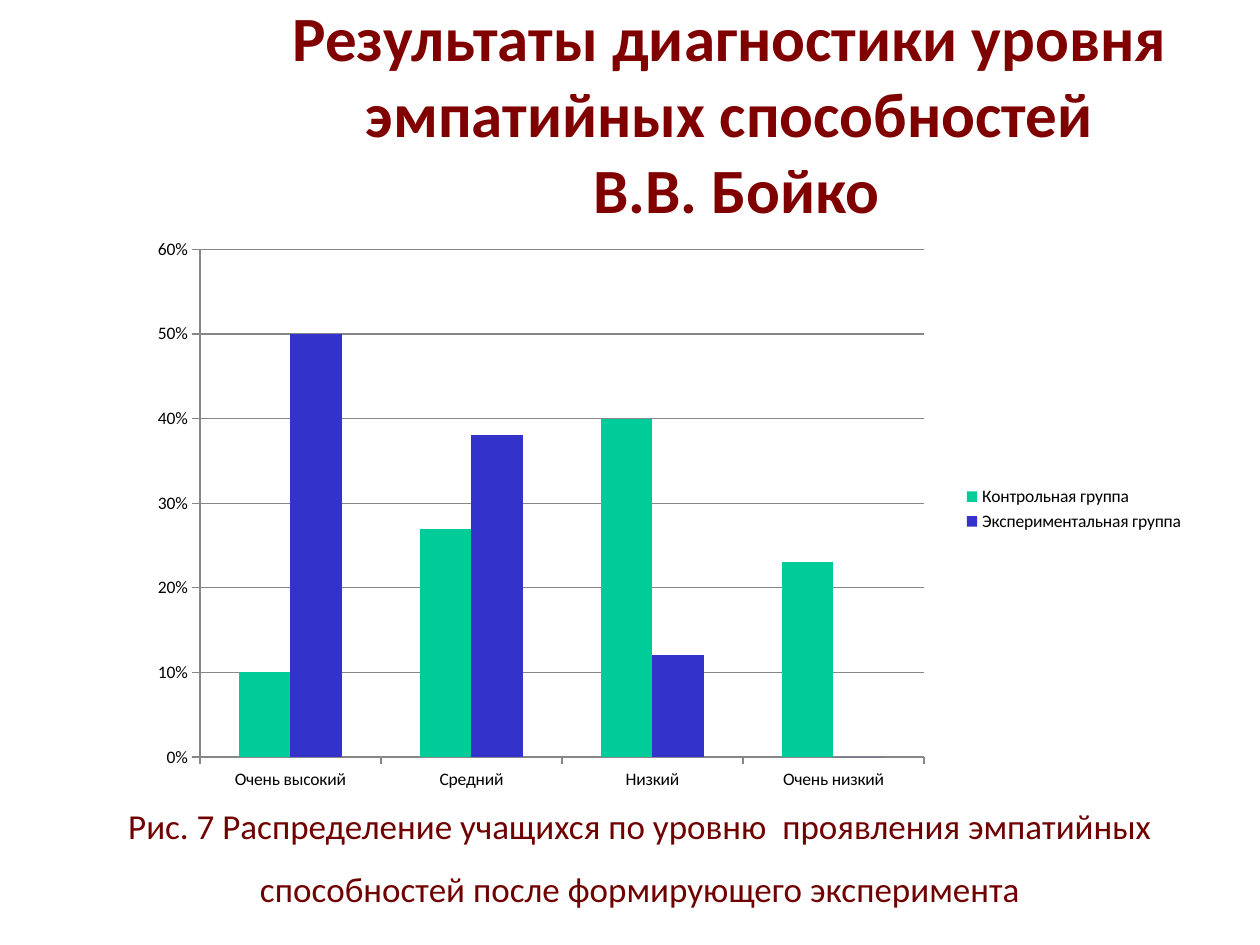
from lxml import etree
from pptx import Presentation
from pptx.chart.data import CategoryChartData
from pptx.dml.color import RGBColor
from pptx.enum.chart import XL_CHART_TYPE as ChartType
from pptx.enum.chart import XL_LEGEND_POSITION as LegendPosition
from pptx.enum.chart import XL_TICK_MARK as TickMark
from pptx.enum.text import MSO_ANCHOR as Anchor
from pptx.enum.text import PP_ALIGN as Align
from pptx.oxml.ns import qn
from pptx.util import Inches, Pt


def color(hex_string):
    return RGBColor.from_string(hex_string)


class SlideBuilder:
    font_name = "Calibri"
    axis_color = "878787"

    def __init__(self, slide):
        self.slide = slide

    def style_font(self, font, size, hex_string, bold=False):
        font.name = self.font_name
        font.size = Pt(size)
        font.bold = bold
        font.color.rgb = color(hex_string)

    def add_text(self, box, text, size, hex_string, bold=False,
                 anchor=Anchor.TOP, line_spacing=1.0, space_after=0):
        shape = self.slide.shapes.add_textbox(*map(Inches, box))
        text_frame = shape.text_frame
        text_frame.word_wrap = True
        text_frame.vertical_anchor = anchor
        text_frame.text = text
        paragraph = text_frame.paragraphs[0]
        paragraph.alignment = Align.CENTER
        paragraph.line_spacing = line_spacing
        paragraph.space_after = Pt(space_after)
        for run in paragraph.runs:
            self.style_font(run.font, size, hex_string, bold)

    def style_line(self, line):
        line.color.rgb = color(self.axis_color)
        line.width = Pt(0.75)

    def add_column_chart(self, box, categories, series, plot_area):
        chart_data = CategoryChartData(number_format="0%")
        chart_data.categories = categories
        for name, values, _ in series:
            chart_data.add_series(name, values)
        chart = self.slide.shapes.add_chart(
            ChartType.COLUMN_CLUSTERED, *map(Inches, box), chart_data).chart
        chart.has_title = False
        self.style_font(chart.font, 10, "000000")

        # Columns
        plot = chart.plots[0]
        plot.gap_width = 150
        plot.overlap = 0
        plot.vary_by_categories = False
        for column, (_, _, fill_color) in zip(plot.series, series):
            column.format.fill.solid()
            column.format.fill.fore_color.rgb = color(fill_color)

        # Axes and gridlines
        for axis in (chart.category_axis, chart.value_axis):
            axis.major_tick_mark = TickMark.OUTSIDE
            axis.minor_tick_mark = TickMark.NONE
            self.style_line(axis.format.line)
        value_axis = chart.value_axis
        value_axis.minimum_scale, value_axis.maximum_scale = 0, 0.6
        value_axis.major_unit = 0.1
        value_axis.tick_labels.number_format = "0%"
        value_axis.tick_labels.number_format_is_linked = False
        value_axis.has_major_gridlines = True
        self.style_line(value_axis.major_gridlines.format.line)

        # Legend
        chart.has_legend = True
        chart.legend.position = LegendPosition.RIGHT
        chart.legend.include_in_layout = False
        self.place_plot(chart, plot_area)

    def place_plot(self, chart, plot_area):
        area = chart._chartSpace.find(".//" + qn("c:plotArea"))
        layout = area.find(qn("c:layout"))
        if layout is None:
            layout = etree.Element(qn("c:layout"))
            area.insert(0, layout)
        manual = etree.SubElement(layout, qn("c:manualLayout"))
        settings = [("layoutTarget", "inner"), ("xMode", "edge"),
                    ("yMode", "edge"), *zip("xywh", plot_area)]
        for tag, value in settings:
            etree.SubElement(manual, qn("c:" + tag)).set("val", str(value))


def main():
    presentation = Presentation()
    presentation.slide_width = Inches(10)
    presentation.slide_height = Inches(7.5)
    slide = presentation.slides.add_slide(presentation.slide_layouts[6])
    builder = SlideBuilder(slide)

    # Title
    builder.add_text(
        (1.58, 0.17, 8.42, 1.67),
        "Результаты диагностики уровня эмпатийных способностей\v В.В. Бойко",
        36, "800000", bold=True, anchor=Anchor.BOTTOM)

    # Figure caption
    builder.add_text(
        (0.58, 6.17, 9, 1.33),
        "Рис. 7 Распределение учащихся по уровню  проявления эмпатийных "
        "способностей после формирующего эксперимента",
        20, "700000", line_spacing=1.5, space_after=10)

    # Empathy levels by group
    builder.add_column_chart(
        (1.17, 1.75, 8.33, 4.58),
        ["Очень высокий", "Средний", "Низкий", "Очень низкий"],
        [("Контрольная группа", (0.1, 0.27, 0.4, 0.23), "00CC99"),
         ("Экспериментальная группа", (0.5, 0.38, 0.12, 0), "3333CC")],
        plot_area=(0.05, 0.05, 0.69, 0.88))

    presentation.save("out.pptx")


if __name__ == "__main__":
    main()
